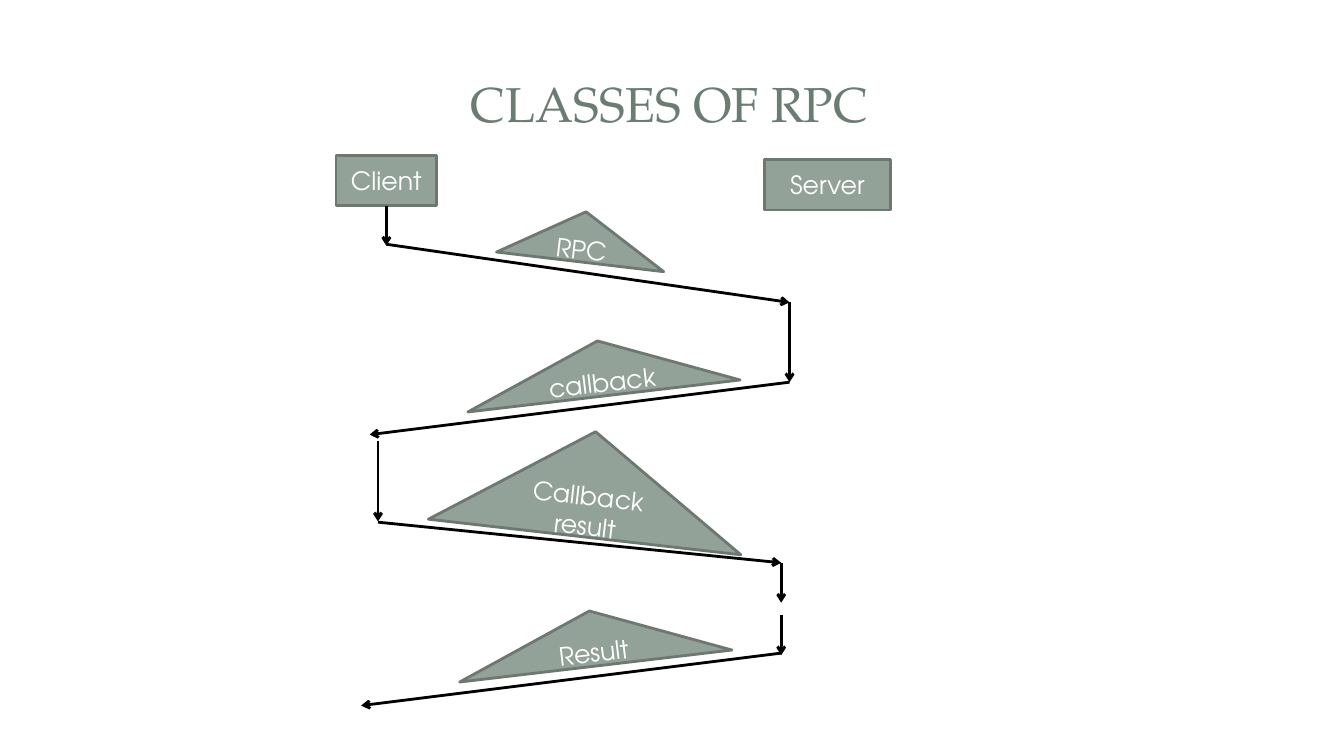
from lxml.etree import SubElement
from pptx import Presentation
from pptx.dml.color import RGBColor
from pptx.enum.shapes import MSO_CONNECTOR, MSO_SHAPE
from pptx.enum.text import MSO_ANCHOR, PP_ALIGN
from pptx.oxml.ns import qn
from pptx.util import Pt

TITLE_FORMAT = {"name": "TeX Gyre Pagella", "size": Pt(35), "bold": False}
LABEL_FORMAT = {"name": "TeX Gyre Adventor", "size": Pt(18), "bold": False}

BOXES = {
    "Client": (240, 111, 72, 36),
    "Server": (546, 114, 90, 36),
}

TRIANGLES = [
    ("RPC", (356.4, 151.2, 120.2, 36), 6.7, 0.5),
    ("callback", (331.2, 243.4, 195.8, 39.6), -6.7, 0.5),
    ("Result", (325.4, 436.3, 195.8, 39.6), -6.7, 0.5),
    ("Callback result", (309.6, 308.2, 224.6, 75.6), 6.5, 0.497),
]

ARROWS = [
    (276, 174.5, 564, 216),
    (564, 216, 564, 273),
    (564, 273, 264, 310.5),
    (270, 315, 270, 372.5),
    (270, 373, 558, 402),
    (558, 402, 558, 430.5),
    (558, 439.5, 558, 468),
    (558, 466.5, 258, 504),
]


def rgb(value):
    return RGBColor.from_string(value)


def set_text(sp, text, font_format, color):
    tf = sp.text_frame
    tf.word_wrap = True
    tf.vertical_anchor = MSO_ANCHOR.MIDDLE
    p = tf.paragraphs[0]
    p.alignment = PP_ALIGN.CENTER
    r = p.add_run()
    r.text = text
    for name, value in font_format.items():
        setattr(r.font, name, value)
    r.font.color.rgb = rgb(color)


def add_title(s, text):
    sp = s.shapes.title
    place = {"left": 44.6, "top": 32.4, "width": 867.6, "height": 82}
    for name, value in place.items():
        setattr(sp, name, Pt(value))
    set_text(sp, text, TITLE_FORMAT, "6B7D72")


def add_label_shape(s, kind, text, place):
    sp = s.shapes.add_shape(kind, *map(Pt, place))
    sp.shadow.inherit = False
    sp.fill.solid()
    sp.fill.fore_color.rgb = rgb("93A299")
    sp.line.color.rgb = rgb("6D7871")
    sp.line.width = Pt(2)
    set_text(sp, text, LABEL_FORMAT, "FFFFFF")
    return sp


def add_triangle(s, text, place, rotation, apex):
    sp = add_label_shape(s, MSO_SHAPE.ISOSCELES_TRIANGLE, text, place)
    sp.rotation = rotation
    sp.adjustments[0] = apex


def add_arrow(s, *ends):
    line = s.shapes.add_connector(MSO_CONNECTOR.STRAIGHT, *map(Pt, ends))
    line.line.color.rgb = rgb("000000")
    line.line.width = Pt(2)
    SubElement(line.line._get_or_add_ln(), qn("a:tailEnd"), type="arrow")
    SubElement(line._element.spPr, qn("a:effectLst"))
    return line


def main():
    prs = Presentation()
    prs.slide_width, prs.slide_height = Pt(960), Pt(540)
    s = prs.slides.add_slide(prs.slide_layouts[5])
    add_title(s, "CLASSES OF RPC")
    boxes = {
        text: add_label_shape(s, MSO_SHAPE.RECTANGLE, text, place)
        for text, place in BOXES.items()
    }
    add_arrow(s, 276, 147, 276, 175.5).begin_connect(boxes["Client"], 2)
    for ends in ARROWS:
        add_arrow(s, *ends)
    for triangle in TRIANGLES:
        add_triangle(s, *triangle)
    prs.save("out.pptx")


if __name__ == "__main__":
    main()
